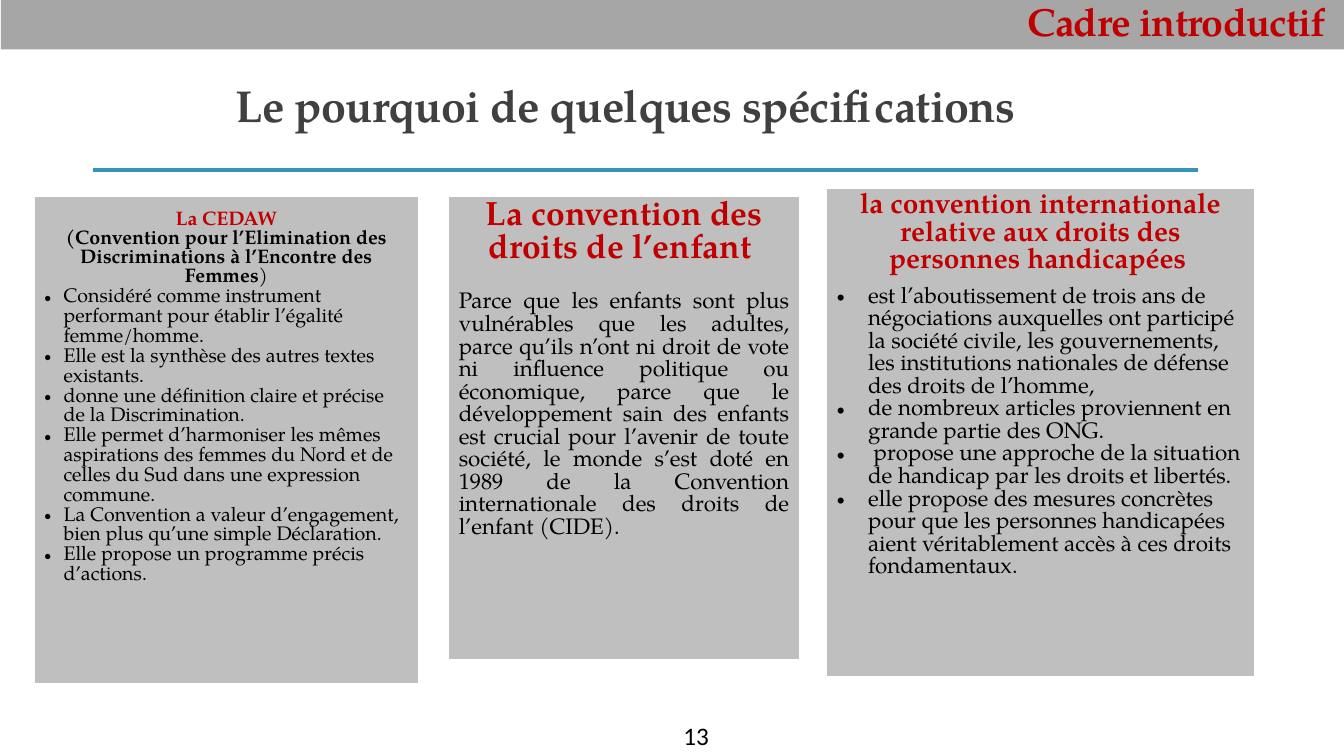
import pptx
import pptx.util
import pptx.dml.color
import pptx.enum.shapes
import pptx.enum.text
import pptx.oxml
import pptx.oxml.ns
from pptx.util import Inches

COLORS = {
    "band": "A6A6A6",
    "panel": "BFBFBF",
    "accent": "C00000",
    "heading": "404040",
    "rule": "3494BA",
    "text": "000000",
    "border": "FFFFFF",
}
SERIF = "TeX Gyre Pagella"
ALIGN = pptx.enum.text.PP_ALIGN
ANCHOR = pptx.enum.text.MSO_ANCHOR

CEDAW_POINTS = [
    "Considéré comme instrument performant pour établir l’égalité femme/homme.",
    "Elle est la synthèse des autres textes existants.",
    "donne une définition claire et précise de la Discrimination.",
    "Elle permet d’harmoniser les mêmes aspirations des femmes du Nord et de celles du Sud dans une expression commune.",
    "La Convention a valeur d’engagement, bien plus qu’une simple Déclaration.",
    "Elle propose un programme précis d’actions.",
]
CHILD_REASON = (
    "Parce que les enfants sont plus vulnérables que les adultes, parce qu’ils n’ont ni droit de vote "
    "ni influence politique ou économique, parce que le développement sain des enfants est crucial pour "
    "l’avenir de toute société, le monde s’est doté en 1989 de la Convention internationale des droits "
    "de l’enfant (CIDE). "
)
DISABILITY_POINTS = [
    "est l’aboutissement de trois ans de négociations auxquelles ont participé la société civile, "
    "les gouvernements, les institutions nationales de défense des droits de l’homme,",
    "de nombreux articles proviennent en grande partie des ONG.",
    " propose une approche de la situation de handicap par les droits et libertés.",
    "elle propose des mesures concrètes pour que les personnes handicapées aient véritablement accès à ces droits fondamentaux.",
]


def rgb(name):
    return pptx.dml.color.RGBColor.from_string(COLORS[name])


def xml(markup):
    return pptx.oxml.parse_xml(markup.replace(" ", f" {pptx.oxml.ns.nsdecls('a')} ", 1))


def add_run(paragraph, text, size, color="text", bold=False, font=SERIF, spacing=None):
    run = paragraph.add_run()
    run.text = text
    run.font.size = pptx.util.Pt(size)
    run.font.name = font
    run.font.bold = bold
    run.font.color.rgb = rgb(color)
    if spacing is not None:
        run.font._element.set("spc", str(round(spacing * 100)))


def write(frame, text, align=ALIGN.LEFT, line=None, after=0, indent=None, **run_format):
    paragraph = frame.paragraphs[0]
    if paragraph.runs:
        paragraph = frame.add_paragraph()
    paragraph.alignment = align
    if line:
        paragraph.line_spacing = line
    if after:
        paragraph.space_after = pptx.util.Pt(after)
    if indent:
        properties = paragraph._p.get_or_add_pPr()
        properties.set("marL", str(Inches(indent)))
        properties.set("indent", str(Inches(-indent)))
        properties.append(xml('<a:buFont typeface="Arial"/>'))
        properties.append(xml('<a:buChar char="•"/>'))
    add_run(paragraph, text, **run_format)
    return paragraph


def text_box(slide, box, text, anchor=ANCHOR.TOP, **text_format):
    frame = slide.shapes.add_textbox(*map(Inches, box)).text_frame
    frame.word_wrap = True
    frame.vertical_anchor = anchor
    write(frame, text, **text_format)


def section_band(slide, box):
    band = slide.shapes.add_shape(pptx.enum.shapes.MSO_SHAPE.RECTANGLE, *map(Inches, box))
    band.shadow.inherit = False
    band.fill.solid()
    band.fill.fore_color.rgb = rgb("band")
    band.line.fill.background()
    band.text_frame.word_wrap = True
    band.text_frame.vertical_anchor = ANCHOR.BOTTOM
    write(band.text_frame, "Cadre introductif ", align=ALIGN.RIGHT, line=0.85,
          size=28, color="accent", bold=True, spacing=-0.5)


def slide_heading(slide, box):
    left, top, width, height = box
    text_box(slide, box, "Le pourquoi de quelques spécifications ", anchor=ANCHOR.BOTTOM,
             align=ALIGN.CENTER, line=0.85, size=32, color="heading", bold=True, spacing=-0.5)
    rule_y = Inches(top + height + 0.33)
    rule = slide.shapes.add_connector(
        pptx.enum.shapes.MSO_CONNECTOR.STRAIGHT,
        Inches(left - 0.52), rule_y, Inches(left + width + 0.81), rule_y)
    rule.line.color.rgb = rgb("rule")
    rule.line.width = pptx.util.Pt(3)
    rule._element.spPr.append(xml("<a:effectLst />"))


def panel(slide, box):
    table = slide.shapes.add_table(1, 1, *map(Inches, box)).table
    table.first_row = False
    table.horz_banding = False
    cell = table.cell(0, 0)
    cell.fill.solid()
    cell.fill.fore_color.rgb = rgb("panel")
    borders = {"lnL": 1, "lnR": 1, "lnT": 1, "lnB": 3}
    for position, (side, points) in enumerate(borders.items()):
        cell._tc.tcPr.insert(position, xml(
            f'<a:{side} w="{pptx.util.Pt(points)}"><a:solidFill>'
            f'<a:srgbClr val="{COLORS["border"]}"/></a:solidFill></a:{side}>'))
    return cell.text_frame


def cedaw_panel(slide, box):
    frame = panel(slide, box)
    write(frame, "La CEDAW", align=ALIGN.CENTER, line=1.5, size=14, color="accent", bold=True)
    full_name = write(frame, "(Convention pour l’Elimination des Discriminations à l’Encontre des Femmes",
                      align=ALIGN.CENTER, size=14, bold=True)
    add_run(full_name, ")", 14)
    for point in CEDAW_POINTS:
        write(frame, point, indent=0.19, size=14)


def child_panel(slide, box):
    frame = panel(slide, box)
    write(frame, "La convention des droits de l’enfant ", align=ALIGN.CENTER, after=18,
          size=24, color="accent", bold=True)
    write(frame, CHILD_REASON, align=ALIGN.JUSTIFY, size=16)


def disability_panel(slide, box):
    frame = panel(slide, box)
    title = write(frame, "la convention internationale relative aux droits des personnes handicapées",
                  align=ALIGN.CENTER, after=8, size=20, color="accent", bold=True)
    add_run(title, " ", 16, color="accent", bold=True)
    for point in DISABILITY_POINTS:
        write(frame, point, indent=0.31, size=16)


def main():
    deck = pptx.Presentation()
    deck.slide_width = Inches(13.33)
    deck.slide_height = Inches(7.5)
    slide = deck.slides.add_slide(deck.slide_layouts[6])
    section_band(slide, (0.01, 0, 13.33, 0.49))
    slide_heading(slide, (1.44, 0.64, 9.63, 0.72))
    text_box(slide, (6.68, 7.1, 1.25, 0.4), "13", size=18, font="Calibri")
    cedaw_panel(slide, (0.34, 1.95, 3.81, 4.84))
    child_panel(slide, (4.45, 1.95, 3.48, 4.61))
    disability_panel(slide, (8.2, 1.87, 4.24, 4.85))
    deck.save("out.pptx")


if __name__ == "__main__":
    main()
